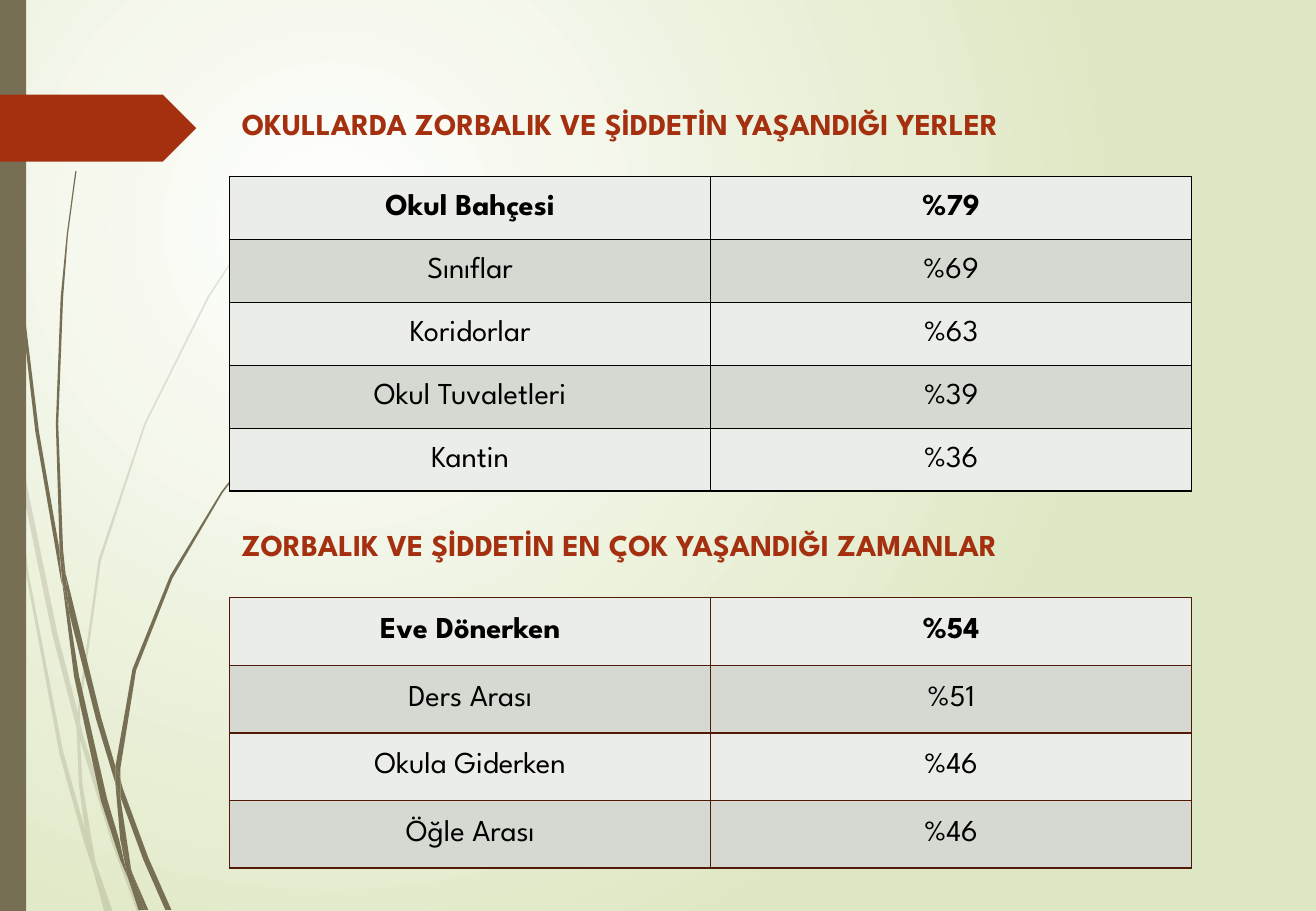
from dataclasses import dataclass

import pptx
import pptx.dml.color
import pptx.dml.fill
import pptx.enum.shapes
import pptx.enum.text
import pptx.oxml
import pptx.oxml.ns
import pptx.shapes.autoshape
import pptx.shapes.base
import pptx.slide
import pptx.table
import pptx.text.text
import pptx.util

# The slide is a grid of square cells, ten to the inch.
CELL = 0.1
COLUMNS, ROWS = 108.3, 75
LEFT, HEADING_WIDTH, HEADING_HEIGHT = 18.9, 67.5, 4
TABLE_WIDTH, TABLE_DROP = 79.15, 6.4

FONT = "League Spartan"
RED, BROWN, DARK_RED, BLACK = "A53010", "766F54", "521808", "000000"
BANDS = ("EBEDE9", "D5D9D1")

Outline = tuple[tuple[float, float], ...]


@dataclass(frozen=True)
class Section:
    heading: str
    top: float
    row_height: float
    border: str
    entries: tuple[tuple[str, int], ...]


@dataclass(frozen=True)
class Grass:
    """A tuft of blades; each outline lists (column, row) corners."""
    opacity: int
    blades: tuple[Outline, ...]


SECTIONS = (
    Section("OKULLARDA ZORBALIK VE ŞİDDETİN YAŞANDIĞI YERLER", 8.15, 5.18, BLACK,
            (("Okul Bahçesi", 79), ("Sınıflar", 69), ("Koridorlar", 63),
             ("Okul Tuvaletleri", 39), ("Kantin", 36))),
    Section("ZORBALIK VE ŞİDDETİN EN ÇOK YAŞANDIĞI ZAMANLAR", 42.8, 5.57, DARK_RED,
            (("Eve Dönerken", 54), ("Ders Arası", 51),
             ("Okula Giderken", 46), ("Öğle Arası", 46))),
)

PALE_GRASS = Grass(20, (
    ((0.8, 35), (0.6, 32.2), (0, 28.2), (0, 29.9), (0.8, 34.4)),
    ((4.3, 52.2), (6.3, 59.9), (6.4, 58.6), (4.7, 52), (1.1, 34.5), (1.3, 37.6)),
    ((6.9, 60.7), (6.6, 59.6), (6.6, 61), (9.2, 69.4), (11.3, 75.1), (11.7, 75.1),
     (9.6, 69.2)),
    ((9, 75.1), (9.3, 75.1), (7.9, 71.1)),
    ((7, 68.3), (5.2, 61.9), (2.3, 46.9), (1.3, 37.6), (0.8, 35), (2.1, 47),
     (4.9, 62.1), (6.9, 69.3), (7.6, 71.4), (7.4, 70.7)),
    ((6.3, 59.9), (6.5, 64.6), (7, 68.3), (7.3, 69.2), (7.9, 71.1), (7.8, 70.6),
     (6.8, 64.6), (6.6, 61), (6.6, 60.8)),
    ((6.6, 58.4), (8.3, 46.2), (12, 34.9), (17.2, 24.5), (20.2, 19.8), (21.8, 17.5),
     (23.5, 15.4), (23.5, 15.3), (21.8, 17.5), (20.2, 19.7), (17.1, 24.4),
     (11.9, 34.8), (8.1, 46.1), (6.4, 58.4), (6.4, 58.6), (6.6, 59.6)),
    ((7.6, 71.4), (8.6, 75.1), (8.9, 75.1)),
    ((6.6, 60.8), (6.6, 61), (6.6, 59.6), (6.4, 58.6), (6.3, 59.9)),
    ((7.3, 69.2), (7, 68.3), (7.4, 70.7), (7.6, 71.4), (8.9, 75.1), (9, 75.1),
     (7.9, 71.1)),
))
DARK_GRASS = Grass(100, (
    ((0.6, 11), (1.5, 23.3), (2.9, 35.5), (5, 47.7), (5.1, 48.1), (4.9, 45.7),
     (4.9, 45.3), (3.2, 35.5), (1.7, 23.2), (0.7, 10.9), (0.4, 4.8), (0.3, 0),
     (0.2, 0), (0.3, 4.8)),
    ((7.9, 59.2), (9.5, 64.5), (9.5, 63.3), (9.5, 63.1), (8.3, 59), (5.4, 47.2),
     (5.7, 50.5)),
    ((10.1, 64.9), (9.9, 64.1), (9.9, 65.6), (11.8, 70.8), (13.6, 74.9),
     (14.1, 74.9), (12.2, 70.6)),
    ((9.8, 69.1), (8.8, 65.7), (6.5, 55.6), (5.7, 50.5), (5.1, 47.7), (6.1, 55.7),
     (8.3, 65.9), (9.9, 70.8), (10.5, 72.2), (10.4, 71.7)),
    ((5.4, 47.2), (5.2, 45.3), (4.8, 34.9), (5.2, 24.5), (5.6, 19.3), (6.3, 14.1),
     (6.2, 14.1), (5.5, 19.3), (5, 24.5), (4.6, 34.9), (4.9, 44.9), (5.3, 47.2)),
    ((11.9, 74.9), (12.2, 74.9), (10.9, 71.9)),
    ((5.1, 47.7), (5.7, 50.5), (5.4, 47.2), (5.3, 47.2), (4.9, 44.9), (4.9, 45.3)),
    ((9.9, 63.3), (11.2, 55.2), (14.2, 47.6), (18.3, 40.6), (20.7, 37.4),
     (22, 35.9), (23.4, 34.4), (23.3, 34.4), (22, 35.8), (20.7, 37.3), (18.2, 40.5),
     (14, 47.4), (10.9, 55.1), (9.5, 63.1), (9.9, 64.1)),
    ((10.5, 72.2), (11.4, 74.9), (11.7, 74.9)),
    ((9.5, 64.5), (9.9, 69.1), (10.4, 70.6), (10.9, 71.9), (10.8, 71.6),
     (9.9, 65.6), (9.7, 65.1)),
    ((9.5, 64.5), (9.7, 65.1), (9.9, 65.6), (9.9, 64.1), (9.5, 63.1), (9.5, 63.3)),
    ((10.4, 70.6), (9.9, 69.1), (10.4, 71.7), (10.5, 72.2), (11.7, 74.9),
     (11.9, 74.9), (10.9, 71.9)),
))


def cells(count: float) -> pptx.util.Length:
    return pptx.util.Inches(count * CELL)


def color(code: str) -> pptx.dml.color.RGBColor:
    return pptx.dml.color.RGBColor.from_string(code)


def paint(fill: pptx.dml.fill.FillFormat, code: str) -> None:
    fill.solid()
    fill.fore_color.rgb = color(code)


def finish_shape(shape: pptx.shapes.autoshape.Shape, code: str) -> None:
    paint(shape.fill, code)
    shape.line.fill.background()
    shape.shadow.inherit = False


def write(frame: pptx.text.text.TextFrame, text: str, *, code: str = BLACK,
          bold: bool = False, centered: bool = False) -> None:
    alignment = pptx.enum.text.PP_ALIGN
    para = frame.paragraphs[0]
    para.alignment = alignment.CENTER if centered else alignment.LEFT
    span = para.add_run()
    span.text = text
    span.font.name = FONT
    span.font.size = pptx.util.Pt(18)
    span.font.bold = bold
    span.font.color.rgb = color(code)


def paint_background(page: pptx.slide.Slide) -> None:
    """Fill the page with a radial gradient centred toward the upper left."""
    fill = page.background.fill
    fill.gradient()
    for position, (stop, code) in enumerate(zip(fill.gradient_stops, ("FFFFFF", "DFE8C4"))):
        stop.color.rgb = color(code)
        stop.position = position
    linear = page.element.find(".//" + pptx.oxml.ns.qn("a:lin"))
    radial = pptx.oxml.parse_xml(
        f'<a:path {pptx.oxml.ns.nsdecls("a")} path="circle"><a:fillToRect '
        'l="50000" t="50000" r="100000" b="100000"/></a:path>')
    linear.getparent().replace(linear, radial)


def draw_grass(page: pptx.slide.Slide, grass: Grass) -> None:
    tuft = page.shapes.add_group_shape()
    for blade in grass.blades:
        corners = [(cells(column), cells(row)) for column, row in blade]
        builder = tuft.shapes.build_freeform(*corners[0])
        builder.add_line_segments(corners[1:], close=True)
        shape = builder.convert_to_shape()
        finish_shape(shape, BROWN)
        if grass.opacity < 100:
            tint = shape.element.spPr.find(".//" + pptx.oxml.ns.qn("a:srgbClr"))
            tint.append(pptx.oxml.parse_xml(
                f'<a:alpha {pptx.oxml.ns.nsdecls("a")} val="{grass.opacity * 1000}"/>'))


def draw_heading(box: pptx.shapes.base.BaseShape, section: Section) -> None:
    box.left, box.top = cells(LEFT), cells(section.top)
    box.width, box.height = cells(HEADING_WIDTH), cells(HEADING_HEIGHT)
    frame = box.text_frame
    frame.word_wrap = True
    frame.auto_size = pptx.enum.text.MSO_AUTO_SIZE.NONE
    frame.vertical_anchor = pptx.enum.text.MSO_ANCHOR.TOP
    write(frame, section.heading, code=RED, bold=True)


def add_borders(cell: pptx.table._Cell, code: str) -> None:
    properties = cell._tc.get_or_add_tcPr()
    for side in "LRTB":
        properties.append(pptx.oxml.parse_xml(
            f'<a:ln{side} {pptx.oxml.ns.nsdecls("a")} w="12700"><a:solidFill>'
            f'<a:srgbClr val="{code}"/></a:solidFill></a:ln{side}>'))


def draw_table(page: pptx.slide.Slide, section: Section) -> None:
    count = len(section.entries)
    table = page.shapes.add_table(
        count, 2, cells(LEFT), cells(section.top + TABLE_DROP),
        cells(TABLE_WIDTH), cells(section.row_height * count)).table
    table.first_row = table.horz_banding = False
    for index, (label, percent) in enumerate(section.entries):
        for cell, text in zip(table.rows[index].cells, (label, f"%{percent}")):
            add_borders(cell, section.border)
            paint(cell.fill, BANDS[index % 2])
            cell.vertical_anchor = pptx.enum.text.MSO_ANCHOR.MIDDLE
            write(cell.text_frame, text, bold=index == 0, centered=True)


def main() -> None:
    deck = pptx.Presentation()
    deck.slide_width, deck.slide_height = cells(COLUMNS), cells(ROWS)
    page = deck.slides.add_slide(deck.slide_layouts.get_by_name("Title Only"))
    paint_background(page)
    for grass in (PALE_GRASS, DARK_GRASS):
        draw_grass(page, grass)
    kinds = pptx.enum.shapes.MSO_SHAPE
    side_bar = page.shapes.add_shape(kinds.RECTANGLE, 0, 0, cells(2.15), cells(ROWS))
    finish_shape(side_bar, BROWN)
    tag = page.shapes.add_shape(kinds.PENTAGON, 0, cells(7.8), cells(16.15), cells(5.5))
    finish_shape(tag, RED)
    second_heading = page.shapes.add_textbox(0, 0, 0, 0)
    for box, section in zip((page.shapes.title, second_heading), SECTIONS):
        draw_heading(box, section)
        draw_table(page, section)
    deck.save("out.pptx")


if __name__ == "__main__":
    main()
